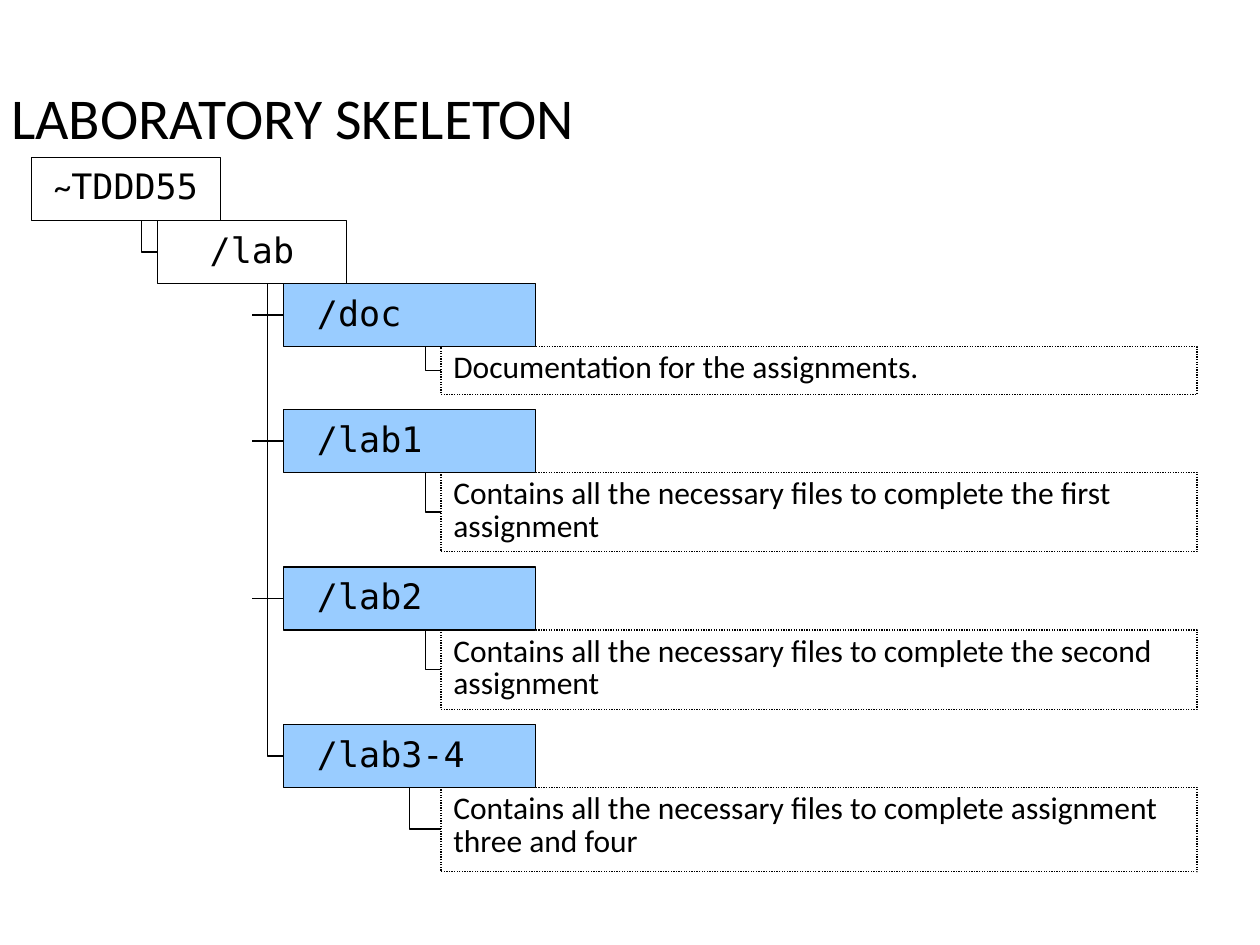
from dataclasses import dataclass

from lxml.etree import SubElement
from pptx import Presentation
from pptx.dml.color import RGBColor
from pptx.enum.dml import MSO_LINE
from pptx.enum.shapes import MSO_CONNECTOR, MSO_SHAPE
from pptx.enum.text import MSO_ANCHOR, MSO_AUTO_SIZE, PP_ALIGN
from pptx.oxml.ns import qn
from pptx.util import Inches, Pt


@dataclass(frozen=True)
class Theme:
    ink: RGBColor = RGBColor(0, 0, 0)
    folder: RGBColor = RGBColor(0x99, 0xCC, 0xFF)
    sans: str = "Calibri"
    mono: str = "DejaVu Sans Mono"
    title_size: Pt = Pt(33)
    folder_size: Pt = Pt(20)
    note_size: Pt = Pt(18)
    line: Pt = Pt(0.75)


theme = Theme()
prs = Presentation()
prs.slide_width, prs.slide_height = Inches(10), Inches(7.5)
slide = prs.slides.add_slide(prs.slide_layouts[5])


def add_box(x, y, w, h, runs, size, spacing, fill=None, align=PP_ALIGN.LEFT):
    """Draw an outlined rectangle; runs holds (text, font name) pairs."""
    sp = slide.shapes.add_shape(
        MSO_SHAPE.RECTANGLE, Inches(x), Inches(y), Inches(w), Inches(h))
    sp.shadow.inherit = False
    if fill is None:
        sp.fill.background()
    else:
        sp.fill.solid()
        sp.fill.fore_color.rgb = fill
    sp.line.color.rgb = theme.ink
    sp.line.width = theme.line
    tf = sp.text_frame
    tf.word_wrap = False
    tf.vertical_anchor = MSO_ANCHOR.MIDDLE
    p = tf.paragraphs[0]
    p.alignment = align
    p.line_spacing = spacing
    for text, font in runs:
        r = p.add_run()
        r.text = text
        r.font.name = font
        r.font.size = size
        r.font.color.rgb = theme.ink
    return sp


def add_elbow(x1, y1, x2, y2):
    cxn = slide.shapes.add_connector(
        MSO_CONNECTOR.ELBOW, Inches(x1), Inches(y1), Inches(x2), Inches(y2))
    cxn.line.color.rgb = theme.ink
    cxn.line.width = theme.line
    SubElement(cxn._element.spPr, qn("a:effectLst"))
    return cxn


# Title
title = slide.shapes.title
title.left, title.top = Inches(0.09), Inches(0.62)
title.width, title.height = Inches(9.25), Inches(0.65)
tf = title.text_frame
tf.margin_left = tf.margin_right = tf.margin_top = tf.margin_bottom = 0
tf.vertical_anchor = MSO_ANCHOR.MIDDLE
tf.auto_size = MSO_AUTO_SIZE.NONE
tf.word_wrap = True
p = tf.paragraphs[0]
p.alignment = PP_ALIGN.LEFT
p.line_spacing = 0.96
r = p.add_run()
r.text = "LABORATORY SKELETON"
r.font.name = theme.sans
r.font.size = theme.title_size
r.font.color.rgb = theme.ink

# Root folders
add_box(0.25, 1.25, 1.5, 0.5, [("~", theme.sans), ("TDDD55", theme.mono)],
        theme.folder_size, 0.86, align=PP_ALIGN.CENTER)
add_box(1.25, 1.75, 1.5, 0.5, [("/lab", theme.mono)],
        theme.folder_size, 0.9, align=PP_ALIGN.CENTER)
add_elbow(1, 1.75, 1.25, 2)

# Subfolders: name, top, note height, note
FOLDER_H = 0.5
folders = [
    (" /doc", 2.25, 0.38, "Documentation for the assignments."),
    (" /lab1", 3.25, 0.63,
     "Contains all the necessary files to complete the first assignment"),
    (" /lab2", 4.5, 0.63,
     "Contains all the necessary files to complete the second assignment"),
    (" /lab3-4", 5.75, 0.67,
     "Contains all the necessary files to complete assignment three and four"),
]
previous = None
for name, top, note_h, note in folders:
    middle, bottom = top + FOLDER_H / 2, top + FOLDER_H
    add_box(2.25, top, 2, FOLDER_H, [(name, theme.mono)],
            theme.folder_size, 0.9, fill=theme.folder)
    if previous is None:
        add_elbow(2, top, 2.25, middle)
    else:
        add_elbow(2.25, middle, 2, previous)
    previous = middle

    box = add_box(3.5, bottom, 6, note_h, [(note, theme.sans)],
                  theme.note_size, 0.86)
    box.line.dash_style = MSO_LINE.ROUND_DOT
    box.text_frame.word_wrap = True
    box.text_frame.vertical_anchor = MSO_ANCHOR.TOP

    if name != folders[-1][0]:
        add_elbow(3.25, bottom, 3.5, bottom + note_h / 2)

# The last note hangs on a single bend: a quarter-turned, mirrored connector
cxn = add_elbow(3.54, 6.29, 3.21, 6.54)
cxn._element.spPr.find(qn("a:prstGeom")).set("prst", "bentConnector2")
cxn._element.spPr.find(qn("a:xfrm")).set("rot", str(270 * 60000))

prs.save("out.pptx")
